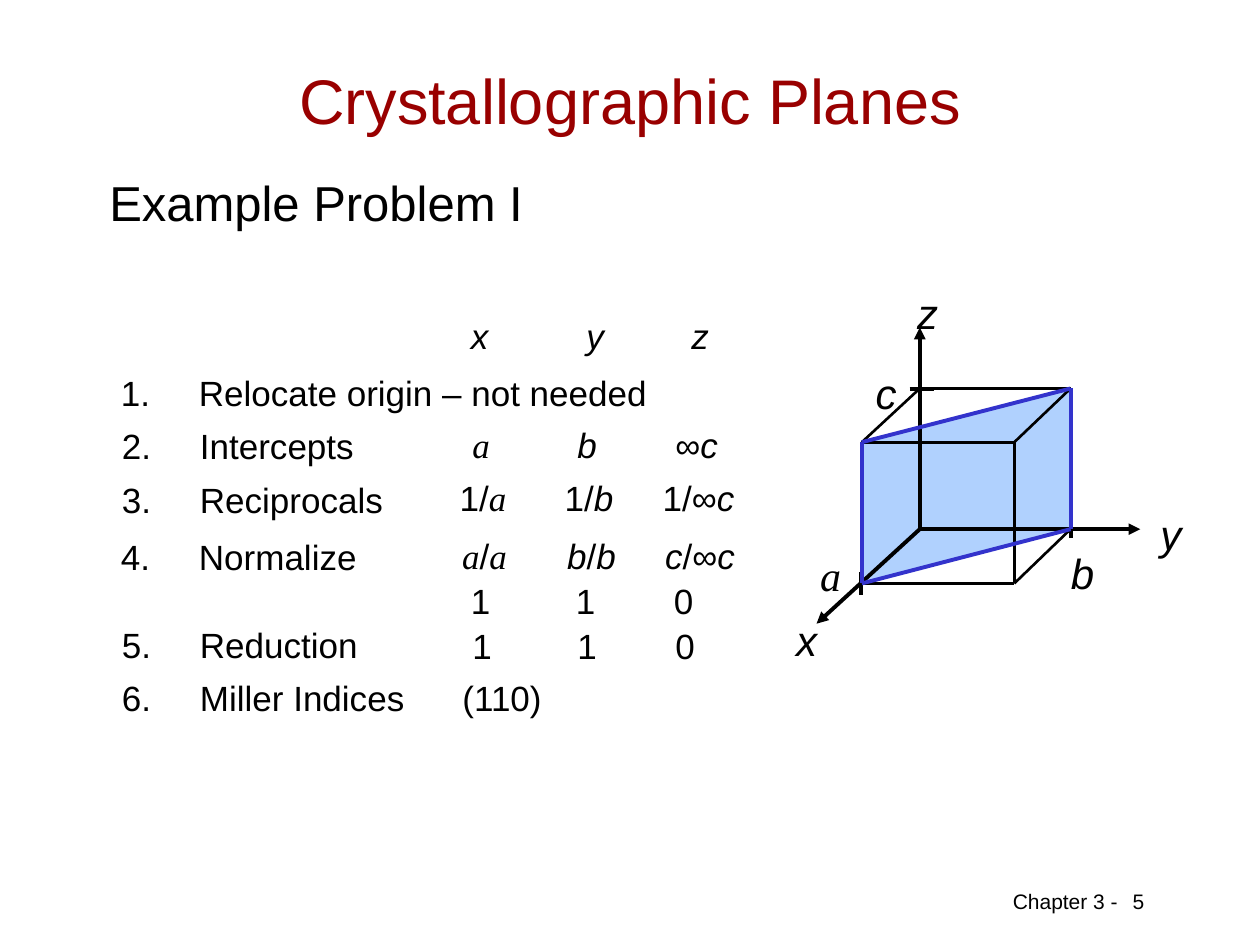
import pptx
import pptx.dml.color
import pptx.enum.shapes
import pptx.enum.text
import pptx.oxml.ns
import pptx.util
from lxml import etree

Pt = pptx.util.Pt
RGB = pptx.dml.color.RGBColor
ALIGN = pptx.enum.text.PP_ALIGN
qn = pptx.oxml.ns.qn

BLACK = RGB(0x00, 0x00, 0x00)
DARK_RED = RGB(0x99, 0x00, 0x00)
BLUE = RGB(0x33, 0x33, 0xCC)
PALE_BLUE = RGB(0xB0, 0xD1, 0xFE)

PLAIN = {"name": "Arial", "italic": False}
ITALIC = {"name": "Arial", "italic": True}
SERIF = {"name": "Times New Roman", "italic": True}

STEP_TABS = (44.6, 194.6)
VALUE_TABS = (60, 116)
HEADING_TABS = (66, 126)

STEPS = [
    (62, 209, "1.\tRelocate origin – not needed"),
    (62.6, 239, "2.\tIntercepts"),
    (62.6, 270, "3.\tReciprocals"),
    (62, 302.4, "4.\tNormalize"),
    (62.6, 352.8, "5.\tReduction"),
    (62.6, 383, "6.\tMiller Indices\t(110)"),
]

ONES = [("1\t1\t0", PLAIN)]
VALUES = [
    (262, 176.4, HEADING_TABS, [("x\ty\tz", ITALIC)]),
    (262.8, 238.3, VALUE_TABS,
     [("a\t", SERIF), ("b\t", ITALIC), ("∞", PLAIN), ("c", ITALIC)]),
    (255.6, 268.6, VALUE_TABS,
     [("1/", PLAIN), ("a", SERIF), ("\t1/", PLAIN), ("b", ITALIC),
      ("\t1/∞", PLAIN), ("c", ITALIC)]),
    (257, 301.7, VALUE_TABS,
     [("a", SERIF), ("/", PLAIN), ("a\t", SERIF), ("b", ITALIC),
      ("/", PLAIN), ("b\tc", ITALIC), ("/∞", PLAIN), ("c", ITALIC)]),
    (262, 327.6, VALUE_TABS, ONES),
    (262.8, 353.5, VALUE_TABS, ONES),
]

ORIGIN = (525.6, 302.4)
A, B, C = (492.5, 333.4), (611.8, 302.4), (525.6, 222)
AB, AC, BC = (579.6, 333.4), (492.5, 252.7), (611.8, 222)
ABC = (579.6, 252.7)

AXIS_TIPS = [(525.6, 187.2), (651.6, 302.4), (466.6, 356.4)]
TICKS = [
    ((612, 307.4), (612, 296.6)),
    ((491.8, 339.8), (491.8, 326.9)),
    ((519.8, 222.5), (533.5, 222.5)),
]
EDGES = [(C, BC), (C, AC), (A, AC), (B, AB), (A, AB),
         (AC, ABC), (BC, ABC), (AB, ABC)]
PLANE = [A, AC, BC, B]

AXIS_LABELS = [
    ("z", 517, 160.6, ITALIC),
    ("x", 447.8, 347.8, ITALIC),
    ("y", 656, 287.3, ITALIC),
    ("a", 461.5, 310.3, SERIF),
    ("b", 604.8, 309.6, ITALIC),
    ("c", 493.2, 206.6, ITALIC),
]


def write(p, runs, size, color=BLACK):
    for text, style in runs:
        r = p.add_run()
        r.text = text
        for key, value in {**style, "size": Pt(size)}.items():
            setattr(r.font, key, value)
        r.font.color.rgb = color


def add_text(s, box, runs, size, align=ALIGN.LEFT, tabs=()):
    tf = s.shapes.add_textbox(*map(Pt, box)).text_frame
    tf.word_wrap = True
    p = tf.paragraphs[0]
    p.alignment = align
    if tabs:
        tab_list = etree.SubElement(p._p.get_or_add_pPr(), qn("a:tabLst"))
        for pos in tabs:
            etree.SubElement(tab_list, qn("a:tab"), pos=str(Pt(pos)), algn="l")
    write(p, runs, size)


def add_line(s, start, end, width, color=BLACK, arrow=False):
    line = s.shapes.add_connector(
        pptx.enum.shapes.MSO_CONNECTOR.STRAIGHT, *map(Pt, start + end))
    line.line.width = Pt(width)
    line.line.color.rgb = color
    if arrow:
        etree.SubElement(line.line._get_or_add_ln(), qn("a:tailEnd"), type="triangle")
    etree.SubElement(line._element.spPr, qn("a:effectLst"))


def add_plane(s):
    points = [tuple(map(Pt, point)) for point in PLANE]
    builder = s.shapes.build_freeform(*points[0], scale=1.0)
    builder.add_line_segments(points[1:], close=True)
    sp = builder.convert_to_shape()
    sp.shadow.inherit = False
    sp.fill.solid()
    sp.fill.fore_color.rgb = PALE_BLUE
    sp.line.width = Pt(0.25)
    sp.line.color.rgb = BLACK


def add_title(s, text):
    sp = s.shapes.title
    box = {"left": 30, "top": 30, "width": 660, "height": 54}
    for key, value in box.items():
        setattr(sp, key, Pt(value))
    sp.text_frame.vertical_anchor = pptx.enum.text.MSO_ANCHOR.MIDDLE
    p = sp.text_frame.paragraphs[0]
    p.alignment = ALIGN.CENTER
    write(p, [(text, PLAIN)], 36, DARK_RED)


def add_unit_cell(s):
    add_plane(s)
    for tip in AXIS_TIPS:
        add_line(s, ORIGIN, tip, 2.25, arrow=True)
    for start, end in TICKS:
        add_line(s, start, end, 2.25)
    for start, end in EDGES:
        add_line(s, start, end, 1.5)
    for start, end in zip(PLANE, PLANE[1:] + PLANE[:1]):
        add_line(s, start, end, 2.25, BLUE)
    for text, left, top, style in AXIS_LABELS:
        add_text(s, (left, top, 24, 36), [(text, style)], 24, ALIGN.CENTER)


def main():
    prs = pptx.Presentation()
    prs.slide_width, prs.slide_height = Pt(720), Pt(540)
    s = prs.slides.add_slide(prs.slide_layouts[5])
    add_title(s, "Crystallographic Planes")
    add_text(s, (55.4, 95, 270, 41), [("Example Problem I", PLAIN)], 28)
    add_unit_cell(s)
    for left, top, text in STEPS:
        add_text(s, (left, top, 330, 31), [(text, PLAIN)], 20, tabs=STEP_TABS)
    for left, top, tabs, runs in VALUES:
        add_text(s, (left, top, 176, 31.7), runs, 20, tabs=tabs)
    add_text(s, (571.7, 504, 76, 21.6), [("Chapter 3 -", PLAIN)], 12)
    add_text(s, (604, 504, 93, 28), [("5", PLAIN)], 12, ALIGN.CENTER)
    prs.save("out.pptx")


if __name__ == "__main__":
    main()
